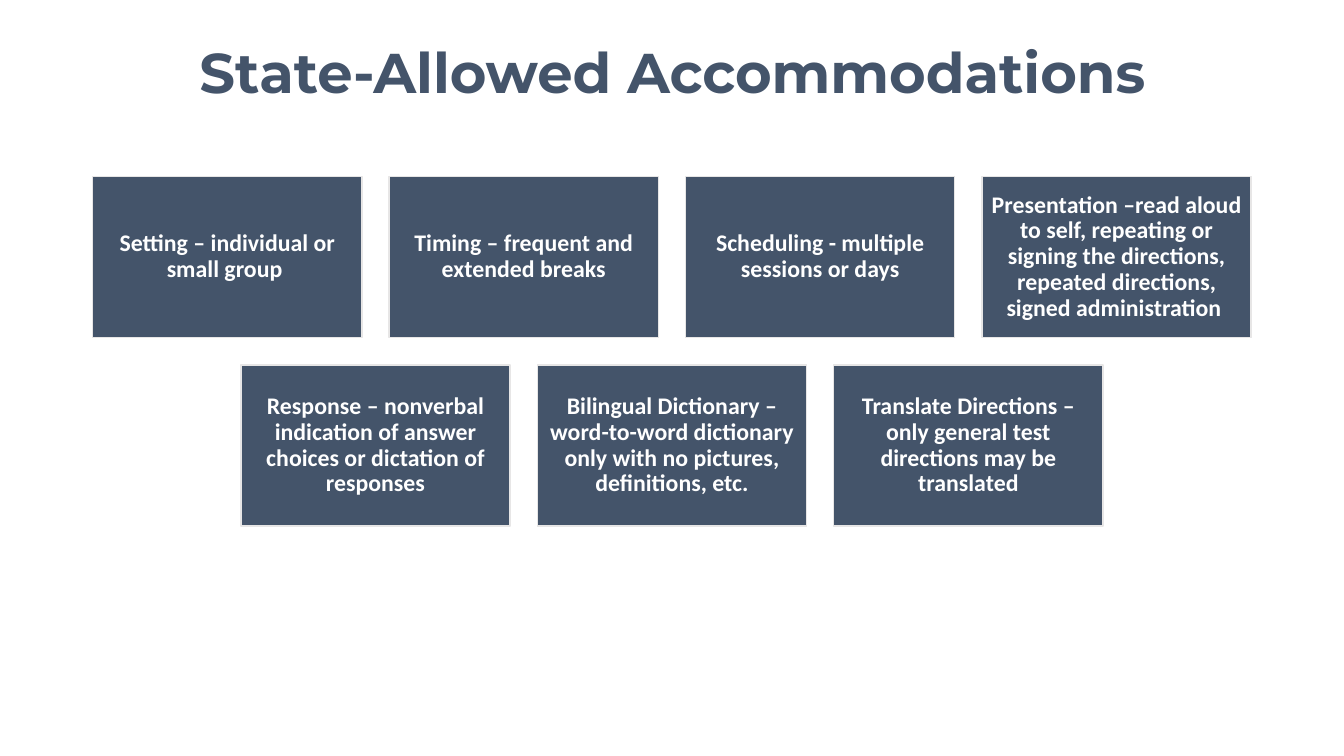
"""Build the State-Allowed Accommodations slide."""
from pptx import Presentation
from pptx.dml.color import RGBColor
from pptx.enum.shapes import MSO_SHAPE as Shape
from pptx.enum.text import MSO_ANCHOR as Anchor, MSO_AUTO_SIZE as AutoSize, PP_ALIGN as Align
from pptx.util import Inches, Pt

TITLE = "State-Allowed Accommodations"
ROWS = [
    [
        "Setting – individual or small group ",
        "Timing – frequent and extended breaks",
        "Scheduling - multiple sessions or days",
        "Presentation –read aloud to self, repeating or signing the directions, "
        "repeated directions, signed administration ",
    ],
    [
        "Response – nonverbal indication of answer choices or dictation of responses",
        "Bilingual Dictionary – word-to-word dictionary only with no pictures, definitions, etc.",
        "Translate Directions – only general test directions may be translated",
    ],
]
SLATE, PALE, WHITE = "44546A", "E7E6E6", "FFFFFF"
SLIDE_WIDTH, SLIDE_HEIGHT = 13.33, 7.5
BOX_WIDTH, BOX_HEIGHT, GAP = 2.67, 1.6, 0.27
GRID_TOP, INSET = 1.75, 0.07


def color(value):
    return RGBColor.from_string(value)


def write(box, text, font, size, fill):
    frame = box.text_frame
    frame.word_wrap = True
    frame.auto_size = AutoSize.NONE
    frame.vertical_anchor = Anchor.MIDDLE
    para = frame.paragraphs[0]
    para.alignment = Align.CENTER
    para.line_spacing = 0.9
    span = para.add_run()
    span.text = text
    span.font.name = font
    span.font.size = Pt(size)
    span.font.bold = True
    span.font.color.rgb = color(fill)
    return frame


def add_card(page, left, top, text):
    card = page.shapes.add_shape(
        Shape.RECTANGLE, Inches(left), Inches(top), Inches(BOX_WIDTH), Inches(BOX_HEIGHT))
    card.shadow.inherit = False
    card.fill.solid()
    card.fill.fore_color.rgb = color(SLATE)
    card.line.color.rgb = color(PALE)
    card.line.width = Pt(1)
    frame = write(card, text, font="Calibri", size=17, fill=WHITE)
    frame.margin_left = frame.margin_right = Inches(INSET)
    frame.margin_top = frame.margin_bottom = Inches(INSET)


def main():
    deck = Presentation()
    deck.slide_width, deck.slide_height = Inches(SLIDE_WIDTH), Inches(SLIDE_HEIGHT)
    page = deck.slides.add_slide(deck.slide_layouts.get_by_name("Title Only"))

    title = page.shapes.title
    title.left, title.top = Inches(0.66), Inches(0.33)
    title.width, title.height = Inches(12.02), Inches(0.84)
    write(title, TITLE, font="Montserrat", size=40, fill=SLATE)

    for row, texts in enumerate(ROWS):
        row_width = len(texts) * (BOX_WIDTH + GAP) - GAP
        start = (SLIDE_WIDTH - row_width) / 2
        top = GRID_TOP + row * (BOX_HEIGHT + GAP)
        for column, text in enumerate(texts):
            add_card(page, start + column * (BOX_WIDTH + GAP), top, text)

    deck.save("out.pptx")


if __name__ == "__main__":
    main()
